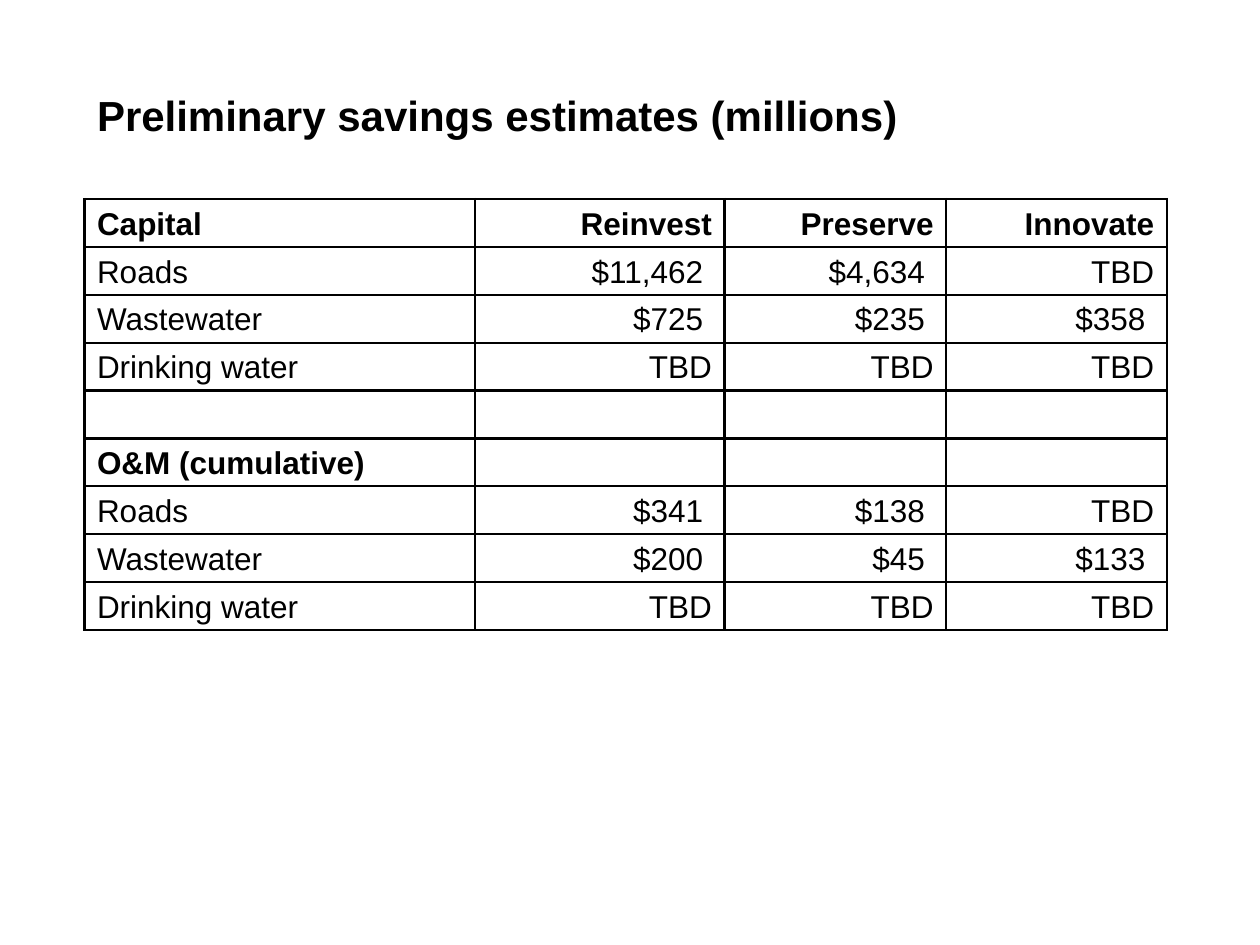
from lxml import etree
from pptx import Presentation
from pptx.dml.color import RGBColor
from pptx.enum.text import MSO_ANCHOR, MSO_AUTO_SIZE, PP_ALIGN
from pptx.oxml.ns import qn
from pptx.util import Inches, Pt

LEFT, RIGHT = PP_ALIGN.LEFT, PP_ALIGN.RIGHT
TOP, BOTTOM = MSO_ANCHOR.TOP, MSO_ANCHOR.BOTTOM
FIT_SHAPE = MSO_AUTO_SIZE.SHAPE_TO_FIT_TEXT
TITLE_ONLY = 5
FONT = "Arial"
COLORS = {"ink": "000000"}
COLUMN_WIDTHS = (3.1, 1.98, 1.76, 1.75)
ROW_HEIGHT = 0.38
BORDER_WIDTH = Pt(1.5)
SAVINGS = (
    ("Capital", "Reinvest", "Preserve", "Innovate"),
    ("Roads", "$11,462 ", "$4,634 ", "TBD"),
    ("Wastewater", "$725 ", "$235 ", "$358 "),
    ("Drinking water", "TBD", "TBD", "TBD"),
    ("", "", "", ""),
    ("O&M (cumulative)", "", "", ""),
    ("Roads", "$341 ", "$138 ", "TBD"),
    ("Wastewater", "$200 ", "$45 ", "$133 "),
    ("Drinking water", "TBD", "TBD", "TBD"),
)
SECTION_HEADS = ("Capital", "O&M (cumulative)")


def format_text(para, size, bold, align):
    """Align a paragraph and style its runs."""
    para.alignment = align
    for span in para.runs:
        span.font.name = FONT
        span.font.size = Pt(size)
        span.font.bold = bold
        span.font.color.rgb = RGBColor.from_string(COLORS["ink"])


def add_borders(cell):
    """Draw a solid line on all four sides of a cell."""
    properties = cell._tc.get_or_add_tcPr()
    for position, side in enumerate(("a:lnL", "a:lnR", "a:lnT", "a:lnB")):
        line = etree.Element(qn(side), w=str(BORDER_WIDTH))
        fill = etree.SubElement(line, qn("a:solidFill"))
        etree.SubElement(fill, qn("a:srgbClr"), val=COLORS["ink"])
        properties.insert(position, line)


def place_title(page, left, top, width, height):
    """Place the slide title in the given box."""
    title = page.shapes.title
    title.left, title.top, title.width, title.height = left, top, width, height
    frame = title.text_frame
    frame.text = "Preliminary savings estimates (millions)"
    frame.word_wrap = True
    frame.auto_size = FIT_SHAPE
    frame.vertical_anchor = TOP
    format_text(frame.paragraphs[0], 24, True, LEFT)


def place_savings_table(page, left, top):
    """Place the savings table with its top left corner at the given point."""
    width = Inches(sum(COLUMN_WIDTHS))
    height = Inches(ROW_HEIGHT * len(SAVINGS))
    table = page.shapes.add_table(
        len(SAVINGS), len(COLUMN_WIDTHS), left, top, width, height
    ).table
    table.first_row = False
    table.horz_banding = False
    for column, column_width in zip(table.columns, COLUMN_WIDTHS):
        column.width = Inches(column_width)
    for row, values in zip(table.rows, SAVINGS):
        row.height = Inches(ROW_HEIGHT)
        for index, (cell, value) in enumerate(zip(row.cells, values)):
            cell.text = value
            cell.vertical_anchor = BOTTOM
            cell.margin_top = cell.margin_bottom = Inches(0.04)
            cell.fill.background()
            add_borders(cell)
            format_text(cell.text_frame.paragraphs[0], 18,
                        values[0] in SECTION_HEADS, RIGHT if index else LEFT)


def main():
    """Build the savings slide and save it."""
    deck = Presentation()
    deck.slide_width, deck.slide_height = Inches(10), Inches(7.5)
    page = deck.slides.add_slide(deck.slide_layouts[TITLE_ONLY])
    place_title(page, Inches(0.67), Inches(0.66), Inches(7.92), Inches(0.5))
    place_savings_table(page, Inches(0.67), Inches(1.58))
    deck.save("out.pptx")


if __name__ == "__main__":
    main()
